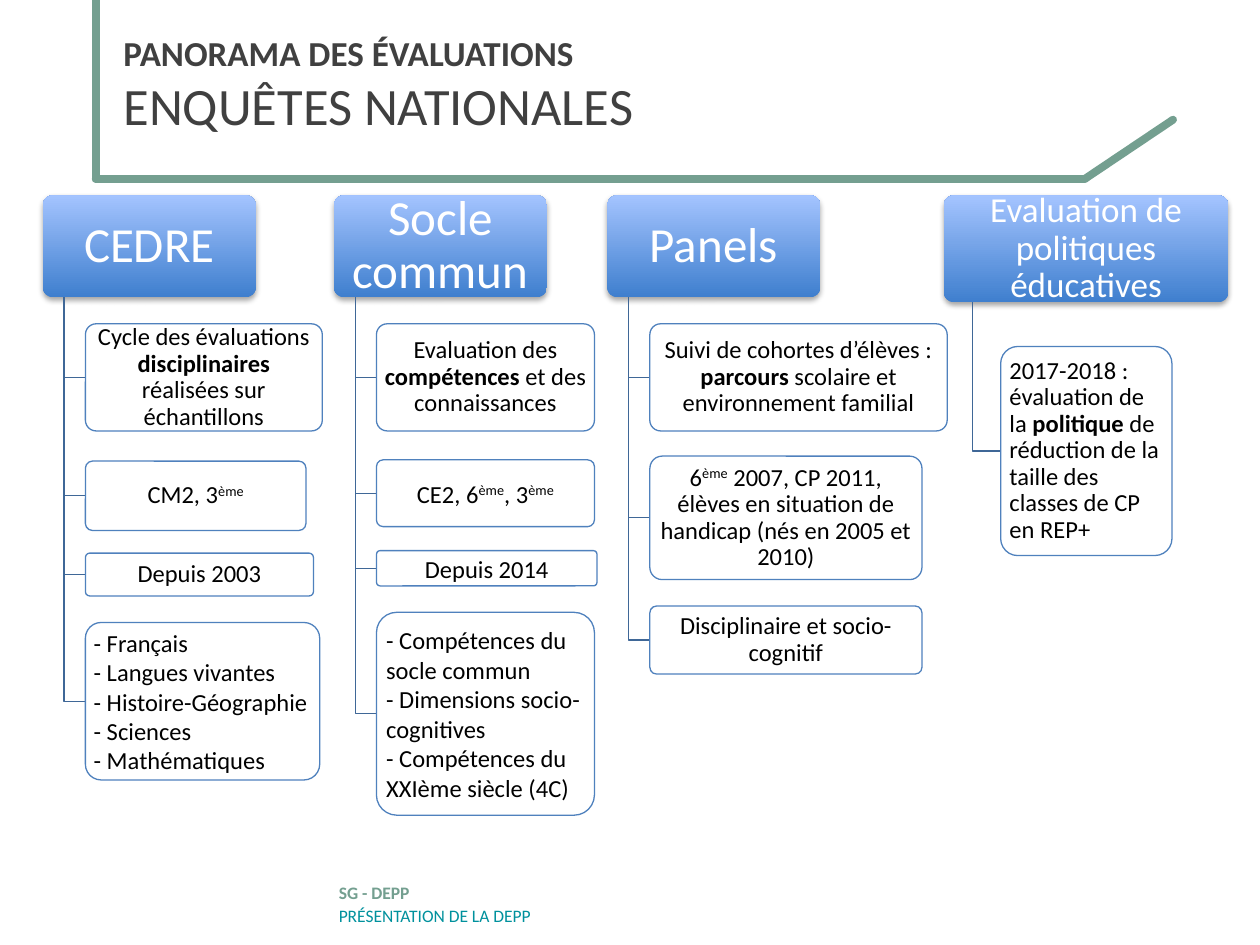
from lxml import etree
from pptx import Presentation
from pptx.dml.color import RGBColor
from pptx.enum.shapes import MSO_CONNECTOR, MSO_SHAPE
from pptx.enum.text import MSO_ANCHOR, PP_ALIGN
from pptx.oxml import parse_xml
from pptx.oxml.ns import nsdecls, qn
from pptx.util import Inches, Pt

LINE = MSO_CONNECTOR.STRAIGHT
ROUND = MSO_SHAPE.ROUNDED_RECTANGLE
MIDDLE = MSO_ANCHOR.MIDDLE
LEFT, CENTER = PP_ALIGN.LEFT, PP_ALIGN.CENTER

THEME = {
    "font": "Calibri",
    "frame": RGBColor.from_string("749F90"),
    "footer": RGBColor.from_string("00919D"),
    "title": RGBColor.from_string("404040"),
    "grad_low": RGBColor.from_string("3F7FCE"),
    "grad_high": RGBColor.from_string("A4C4FF"),
    "branch": RGBColor.from_string("3F6797"),
    "border": RGBColor.from_string("4F81BD"),
    "white": RGBColor.from_string("FFFFFF"),
    "black": RGBColor.from_string("000000"),
    "over": 20, "heading": 30, "head": 28, "head_small": 20,
    "body": 14, "small": 10,
}
T = THEME
SHADOW = (f'<a:effectLst {nsdecls("a")}><a:outerShdw blurRad="39400" dist="22900" '
          'dir="5400000" rotWithShape="0"><a:srgbClr val="000000">'
          '<a:alpha val="35000"/></a:srgbClr></a:outerShdw></a:effectLst>')

prs = Presentation()
prs.slide_width, prs.slide_height = Inches(10), Inches(7.5)
s = prs.slides.add_slide(prs.slide_layouts[5])
COL, ROW = prs.slide_width / 100, prs.slide_height / 75


def grid(x, y, *size):
    """Turn columns and rows (and width, height) into slide lengths."""
    return [round(v * u) for v, u in zip((x, y, *size), (COL, ROW, COL, ROW))]


def add_run(p, text, size, color, bold=False, baseline=None):
    r = p.add_run()
    r.text = text
    fmt = {"name": T["font"], "size": Pt(size), "bold": bold}
    for key, value in fmt.items():
        setattr(r.font, key, value)
    r.font.color.rgb = color
    if baseline:
        r.font._element.set("baseline", baseline)


# Frame around the title
CORNER, BEND, TIP = (7.6, 14.2), (86.1, 14.2), (93.1, 9.5)
for start, end in ((CORNER, BEND), (BEND, TIP), (CORNER, (7.6, 0))):
    line = s.shapes.add_connector(LINE, *grid(*start), *grid(*end))
    line.line.color.rgb = T["frame"]
    line.line.width = Pt(4.5)
    ln = line.line._get_or_add_ln()
    ln.set("cap", "rnd")
    etree.SubElement(line._element.spPr, qn("a:effectLst"))

# Title and footer, two lines each
title = s.shapes.title
title.left, title.top, title.width, title.height = grid(8.8, 0, 86.2, 13.3)
footer = s.shapes.add_textbox(*grid(25.9, 69, 50.5, 5.4))
two_lines = (
    (title, None, ("PANORAMA DES ÉVALUATIONS", T["over"], T["title"]),
     ("ENQUÊTES NATIONALES", T["heading"], T["title"])),
    (footer, Pt(13.2), ("SG - DEPP", T["small"], T["frame"]),
     ("PRÉSENTATION DE LA DEPP", T["small"], T["footer"])),
)
for sp, spacing, first, second in two_lines:
    tf = sp.text_frame
    tf.word_wrap, tf.vertical_anchor = True, MIDDLE
    p = tf.paragraphs[0]
    p.alignment, p.line_spacing = LEFT, spacing
    add_run(p, *first, bold=True)
    p.add_line_break()
    add_run(p, *second)

# Each box: top, width, height, alignment, line spacing, paragraphs of runs
BOLD, SUP = {"bold": True}, {"baseline": "30000"}
EME = ("ème", SUP)
columns = [
    (3.4, 16.9, 8.1, T["head"], "CEDRE", [
        (25.7, 18.8, 8.5, CENTER, 0.9, [["Cycle des évaluations ", ("disciplinaires", BOLD),
                                         " réalisées sur échantillons"]]),
        (36.6, 17.5, 5.5, CENTER, 0.9, [["CM2, 3", EME]]),
        (43.9, 18.1, 3.4, CENTER, 0.9, [["Depuis 2003"]]),
        (49.4, 18.6, 12.5, LEFT, 1.0, [["- Français"], ["- Langues vivantes"],
                                       ["- Histoire-Géographie"], ["- Sciences"],
                                       ["- Mathématiques"]]),
    ]),
    (26.5, 16.9, 8.1, T["head"], "Socle commun", [
        (25.7, 17.3, 8.5, CENTER, 0.9, [["Evaluation des ", ("compétences", BOLD),
                                         " et des connaissances"]]),
        (36.5, 17.3, 5.3, CENTER, 1.0, [["CE2, 6", EME, ", 3", EME]]),
        (43.7, 17.5, 2.8, CENTER, 1.0, [["Depuis 2014"]]),
        (48.6, 17.3, 16.1, LEFT, 1.0, [["- Compétences du socle commun"],
                                       ["- Dimensions socio-cognitives"],
                                       ["- Compétences du XXIème siècle (4C)"]]),
    ]),
    (48.2, 16.9, 8.1, T["head"], "Panels", [
        (25.7, 23.6, 8.5, CENTER, 0.9, [["Suivi de cohortes d’élèves : ", ("parcours", BOLD),
                                         " scolaire et environnement familial"]]),
        (36.2, 21.6, 9.8, CENTER, 0.9, [["6", EME, " 2007, CP 2011, élèves en situation de "
                                         "handicap (nés en 2005 et 2010)"]]),
        (48.1, 21.6, 5.4, CENTER, 0.9, [["Disciplinaire et socio-cognitif"]]),
    ]),
    (74.9, 22.6, 8.5, T["head_small"], "Evaluation de politiques éducatives", [
        (27.5, 13.6, 16.6, LEFT, 0.9, [["2017-2018 : évaluation de la ", ("politique", BOLD),
                                        " de réduction de la taille des classes de CP en REP+"]]),
    ]),
]
HEAD_TOP = 15.5
for left, width, height, size, name, boxes in columns:
    trunk, box_left, foot = left + width * 0.1, left + width * 0.2, HEAD_TOP + height
    cards = [(left, HEAD_TOP, width, height, CENTER, 0.9, [[name]])]
    cards += [(box_left, *box) for box in boxes]
    for i, (x, y, w, h, align, spacing, paragraphs) in enumerate(cards):
        is_head = i == 0
        if not is_head:
            middle = y + h / 2
            path = s.shapes.build_freeform(*grid(trunk, foot))
            path.add_line_segments([grid(trunk, middle), grid(x, middle)], close=False)
            branch = path.convert_to_shape()
            branch.shadow.inherit = False
            branch.fill.background()
            branch.line.color.rgb, branch.line.width = T["branch"], Pt(0.75)
        sp = s.shapes.add_shape(ROUND, *grid(x, y, w, h))
        sp.adjustments[0] = 0.1
        if is_head:
            sp.fill.gradient()
            sp.fill.gradient_angle = 90
            for stop, key in zip(sp.fill.gradient_stops, ("grad_low", "grad_high")):
                stop.color.rgb = T[key]
            sp.line.fill.background()
            sp._element.spPr.append(parse_xml(SHADOW))
        else:
            sp.shadow.inherit = False
            sp.fill.solid()
            sp.fill.fore_color.rgb = T["white"]
            sp.line.color.rgb, sp.line.width = T["border"], Pt(0.75)
        tf = sp.text_frame
        side, edge = (size / 500, size / 700) if is_head else (0.03, 0.02)
        frame = {"word_wrap": True, "vertical_anchor": MIDDLE,
                 "margin_left": Inches(side), "margin_right": Inches(side),
                 "margin_top": Inches(edge), "margin_bottom": Inches(edge)}
        for key, value in frame.items():
            setattr(tf, key, value)
        for n, runs in enumerate(paragraphs):
            p = tf.add_paragraph() if n else tf.paragraphs[0]
            p.alignment, p.line_spacing = align, spacing
            for run in runs:
                text, extra = (run, {}) if isinstance(run, str) else run
                add_run(p, text, size if is_head else T["body"],
                        T["white"] if is_head else T["black"], **extra)

prs.save("out.pptx")
